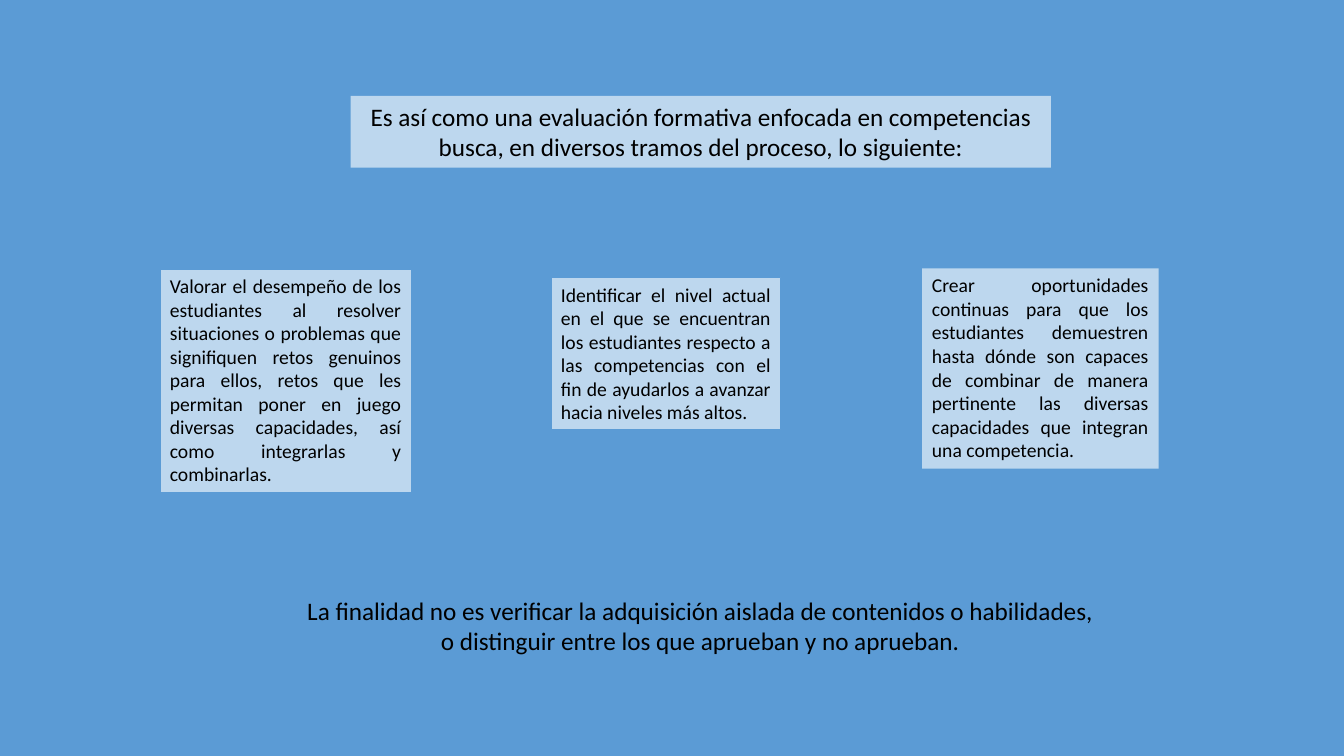
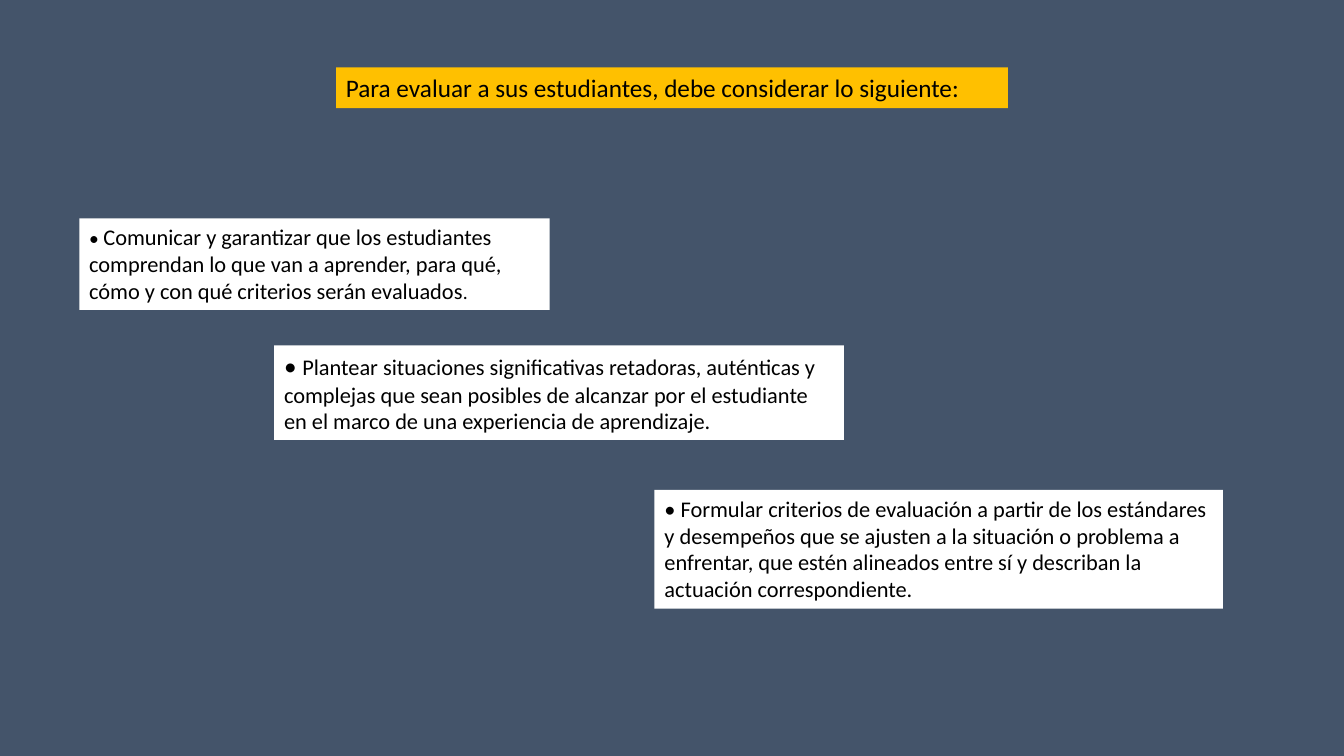
from pptx import Presentation, util as u
from pptx.dml.color import RGBColor
from pptx.enum import shapes, text

SKY, PALE, SLATE = "5B9BD5", "BDD7EE", "44546A"
GOLD, WHITE, BLACK = "FFC000", "FFFFFF", "000000"
FONT = "Calibri"
HEAD, BODY, SMALL = 18, 16, 14
LEFT, MID, JUST = text.PP_ALIGN.LEFT, text.PP_ALIGN.CENTER, text.PP_ALIGN.JUSTIFY


def tint(code):
    return RGBColor.from_string(code)


class Deck:
    """Style and current slide; lengths are percent of the slide's size."""

    def __init__(self):
        self.prs = Presentation()
        self.prs.slide_width = u.Inches(13.33)
        self.prs.slide_height = u.Inches(7.5)

    def page(self, back):
        self.slide = self.prs.slides.add_slide(self.prs.slide_layouts[6])
        fill = self.slide.background.fill
        fill.solid()
        fill.fore_color.rgb = tint(back)

    def area(self, x, y, w, h):
        wide, high = self.prs.slide_width, self.prs.slide_height
        return [int(part * full / 100)
                for part, full in ((x, wide), (y, high), (w, wide), (h, high))]

    def label(self, shape, runs, align):
        frame = shape.text_frame
        frame.word_wrap = True
        frame.auto_size = text.MSO_AUTO_SIZE.SHAPE_TO_FIT_TEXT
        frame.vertical_anchor = text.MSO_ANCHOR.TOP
        para = frame.paragraphs[0]
        para.alignment = align
        for words, size in runs:
            run = para.add_run()
            run.text = words
            run.font.name = FONT
            run.font.size = u.Pt(size)
            run.font.color.rgb = tint(BLACK)

    def note(self, at, runs, align=LEFT):
        self.label(self.slide.shapes.add_textbox(*self.area(*at)), runs, align)

    def box(self, at, fill, runs, align=LEFT, edge=None):
        shape = self.slide.shapes.add_shape(
            shapes.MSO_SHAPE.RECTANGLE, *self.area(*at))
        shape.shadow.inherit = False
        shape.fill.solid()
        shape.fill.fore_color.rgb = tint(fill)
        if edge:
            shape.line.color.rgb = tint(edge)
            shape.line.width = u.Pt(1)
        else:
            shape.line.fill.background()
        self.label(shape, runs, align)


def goals(deck):
    deck.page(SKY)
    # Heading
    deck.box((26.1, 12.7, 52.1, 9.5), PALE, [(
        "Es así como una evaluación formativa enfocada en competencias busca, "
        "en diversos tramos del proceso, lo siguiente:", HEAD)], MID)
    # Three goals
    for at, edge, words in (
        ((11.9, 35.6, 18.7, 29.6), SKY,
         "Valorar el desempeño de los estudiantes al resolver situaciones o "
         "problemas que signifiquen retos genuinos para ellos, retos que les "
         "permitan poner en juego diversas capacidades, así como integrarlas "
         "y combinarlas."),
        ((41, 36.7, 17.1, 20.1), SKY,
         "Identificar el nivel actual en el que se encuentran los estudiantes "
         "respecto a las competencias con el fin de ayudarlos a avanzar hacia "
         "niveles más altos."),
        ((68.6, 35.5, 17.6, 26.5), None,
         "Crear oportunidades continuas para que los estudiantes demuestren "
         "hasta dónde son capaces de combinar de manera pertinente las "
         "diversas capacidades que integran una competencia."),
    ):
        deck.box(at, PALE, [(words, SMALL)], JUST, edge)
    # Closing line
    deck.note((22.1, 78.1, 60, 9.5), [(
        "La finalidad no es verificar la adquisición aislada de contenidos o "
        "habilidades, o distinguir entre los que aprueban y no aprueban.",
        HEAD)], MID)


def advice(deck):
    deck.page(SLATE)
    # Heading
    deck.box((25, 8.9, 50, 5.4), GOLD, [(
        "Para evaluar a sus estudiantes, debe considerar lo siguiente:", HEAD)])
    # Steps down the slide
    for at, runs in (
        ((5.9, 28.9, 35, 12.1), [
            ("• ", SMALL),
            ("Comunicar y garantizar que los estudiantes comprendan lo que van "
             "a aprender, para qué, cómo y con qué criterios serán evaluados",
             BODY),
            (".", SMALL)]),
        ((20.4, 45.7, 42.4, 12.5), [
            ("• ", HEAD),
            ("Plantear situaciones significativas retadoras, auténticas y "
             "complejas que sean posibles de alcanzar por el estudiante en el "
             "marco de una experiencia de aprendizaje.", BODY)]),
        ((48.7, 64.8, 42.3, 15.7), [
            ("• Formular criterios de evaluación a partir de los estándares y "
             "desempeños que se ajusten a la situación o problema a enfrentar, "
             "que estén alineados entre sí y describan la actuación "
             "correspondiente.", BODY)]),
    ):
        deck.box(at, WHITE, runs)


def main():
    deck = Deck()
    goals(deck)
    advice(deck)
    deck.prs.save("out.pptx")


if __name__ == "__main__":
    main()
